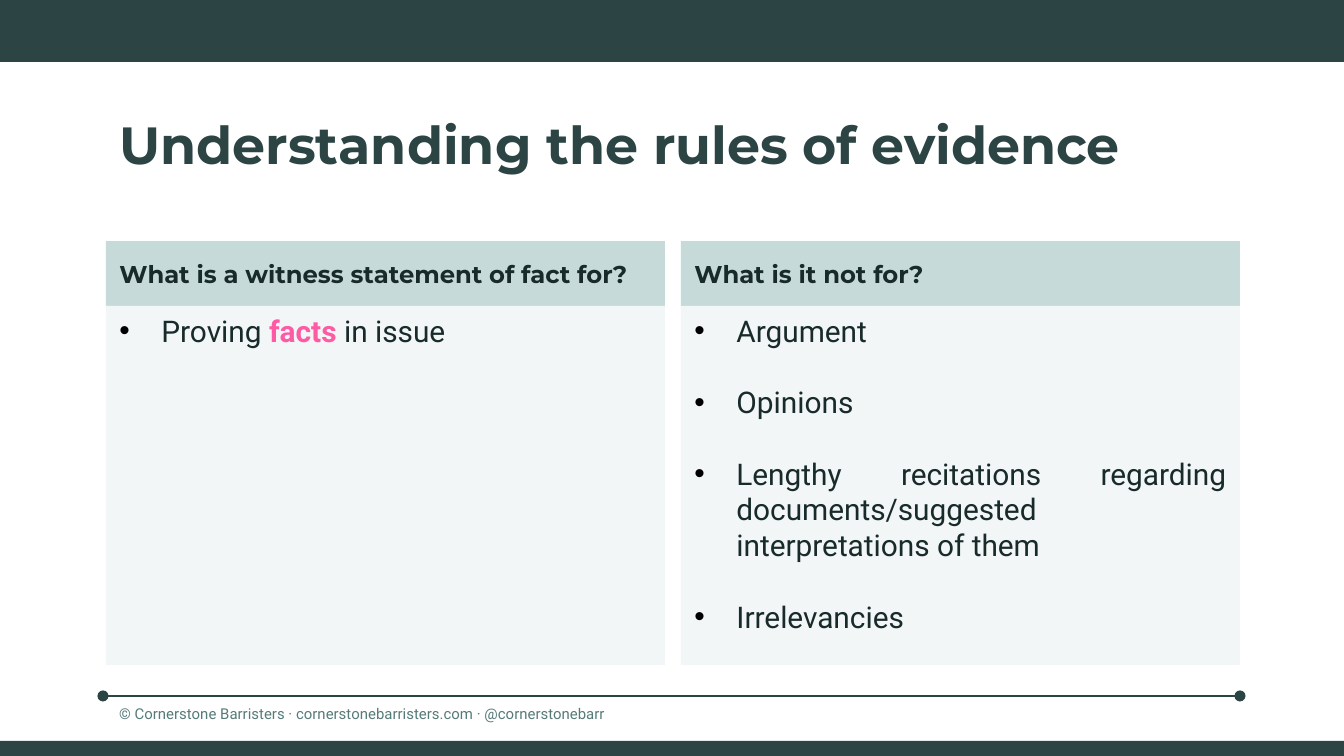
import pptx
import pptx.util
import pptx.dml.color
import pptx.enum.shapes
import pptx.enum.text
import pptx.oxml
import pptx.oxml.ns
import lxml.etree

SCALE = 914400 / 134.4
WIDE, HIGH = 1344, 756
LEFT, COL, STEP = 106, 559, 575
COLORS = {
    "dark": "2C4444", "ink": "182B2A", "head": "C6DADA", "pale": "F2F6F6",
    "pink": "FF5AA4", "note": "567A78", "dot": "000000",
}
Align = pptx.enum.text.PP_ALIGN
Anchor = pptx.enum.text.MSO_ANCHOR
TITLE = {"name": "Montserrat", "size": 28, "bold": True, "color": "dark"}
HEAD = {"name": "Montserrat", "size": 13, "bold": True, "color": "ink"}
BODY = {"name": "Roboto", "size": 16, "bold": False, "color": "ink"}
KEY = BODY | {"bold": True, "color": "pink"}
NOTE = {"name": "Roboto", "size": 8, "bold": False, "color": "note"}
PANELS = [
    ("What is a witness statement of fact for?", Align.LEFT,
     [[("Proving ", BODY), ("facts", KEY), (" in issue", BODY)]]),
    ("What is it not for?", Align.JUSTIFY,
     [[(text, BODY)] for text in (
         "Argument",
         "Opinions",
         "Lengthy recitations regarding documents/suggested interpretations of them",
         "Irrelevancies",
     )]),
]


def px(size):
    return pptx.util.Emu(round(size * SCALE))


def tint(name):
    return pptx.dml.color.RGBColor.from_string(COLORS[name])


def paint(shape, color):
    shape.fill.solid()
    shape.fill.fore_color.rgb = tint(color)


def place(shape, box):
    for name, size in zip(("left", "top", "width", "height"), box):
        setattr(shape, name, px(size))


def style(font, form):
    for name, value in form.items():
        if name == "color":
            font.color.rgb = tint(value)
        else:
            setattr(font, name, pptx.util.Pt(value) if name == "size" else value)


def bullet(para):
    props = para._p.get_or_add_pPr()
    props.set("marL", str(px(42)))
    props.set("indent", str(px(-42)))
    space = pptx.oxml.ns.nsdecls("a")
    for part in (
        f'<a:buClr {space}><a:srgbClr val="{COLORS["dot"]}"/></a:buClr>',
        f'<a:buFont {space} typeface="Arial"/>',
        f'<a:buChar {space} char="•"/>',
    ):
        props.append(pptx.oxml.parse_xml(part))


def write(shape, lines, anchor=Anchor.TOP, align=Align.LEFT, gap=0, dots=False):
    frame = shape.text_frame
    form = {"word_wrap": True, "vertical_anchor": anchor,
            "auto_size": pptx.enum.text.MSO_AUTO_SIZE.NONE}
    for name, value in form.items():
        setattr(frame, name, value)
    for rank, line in enumerate(lines):
        para = frame.add_paragraph() if rank else frame.paragraphs[0]
        if dots:
            bullet(para)
        form = {"alignment": align, "space_after": pptx.util.Pt(0),
                "space_before": pptx.util.Pt(gap if rank else 0)}
        for name, value in form.items():
            setattr(para, name, value)
        for text, look in line:
            run = para.add_run()
            run.text = text
            style(run.font, look)


def bar(slide, top, tall):
    kind = pptx.enum.shapes.MSO_SHAPE.RECTANGLE
    shape = slide.shapes.add_shape(kind, px(0), px(top), px(WIDE), px(tall))
    shape.shadow.inherit = False
    paint(shape, "dark")
    shape.line.fill.background()


def rule(slide, left, right, top):
    kind = pptx.enum.shapes.MSO_CONNECTOR.STRAIGHT
    line = slide.shapes.add_connector(kind, px(left), px(top), px(right), px(top))
    line.line.color.rgb = tint("dark")
    line.line.width = pptx.util.Pt(0.75)
    stroke = line.line._get_or_add_ln()
    for end in ("a:headEnd", "a:tailEnd"):
        lxml.etree.SubElement(stroke, pptx.oxml.ns.qn(end), type="oval")
    lxml.etree.SubElement(line._element.spPr, pptx.oxml.ns.qn("a:effectLst"))


def panel(slide, rank, head, align, lines):
    left = LEFT + rank * STEP
    top = slide.placeholders[1 + 2 * rank]
    place(top, (left, 241, COL, 65))
    paint(top, "head")
    write(top, [[(head, HEAD)]], Anchor.MIDDLE)
    body = slide.placeholders[2 + 2 * rank]
    place(body, (left, 306, COL, 359))
    paint(body, "pale")
    write(body, lines, align=align, gap=19, dots=True)


def footer(slide, text):
    box = slide.shapes.add_textbox(px(LEFT), px(691), px(665), px(42))
    for side in ("left", "top", "right", "bottom"):
        setattr(box.text_frame, f"margin_{side}", pptx.util.Inches(0.1))
    write(box, [[(text, NOTE)]])


def main():
    deck = pptx.Presentation()
    deck.slide_width, deck.slide_height = px(WIDE), px(HIGH)
    slide = deck.slides.add_slide(deck.slide_layouts.get_by_name("Comparison"))
    rule(slide, 103, 1240, 696)
    bar(slide, 0, 62)
    bar(slide, 741, 15)
    footer(slide, "© Cornerstone Barristers · cornerstonebarristers.com · @cornerstonebarr")
    title = slide.shapes.title
    place(title, (LEFT, 106, 1134, 78))
    write(title, [[("Understanding the rules of evidence", TITLE)]])
    for rank, (head, align, lines) in enumerate(PANELS):
        panel(slide, rank, head, align, lines)
    deck.save("out.pptx")


if __name__ == "__main__":
    main()
